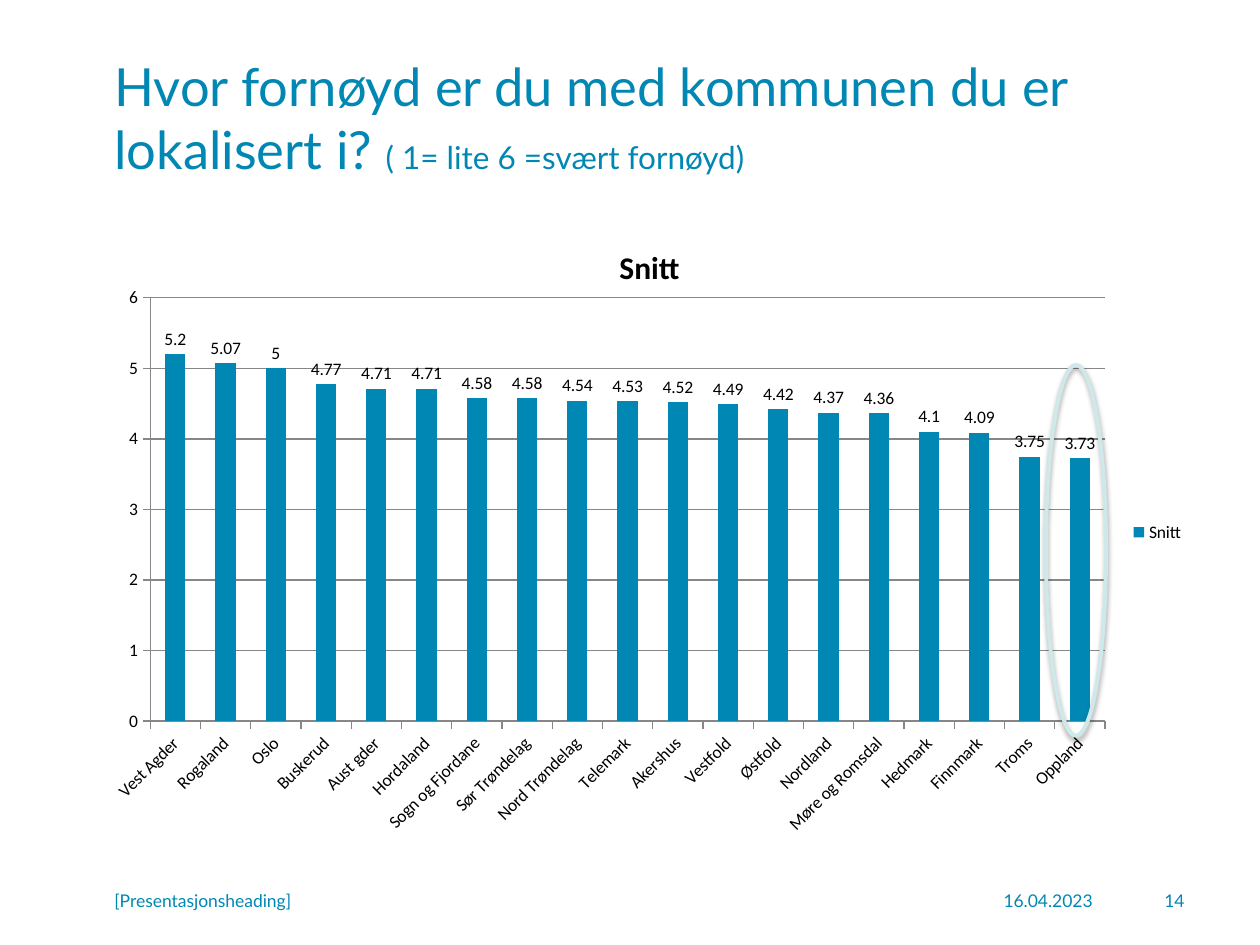
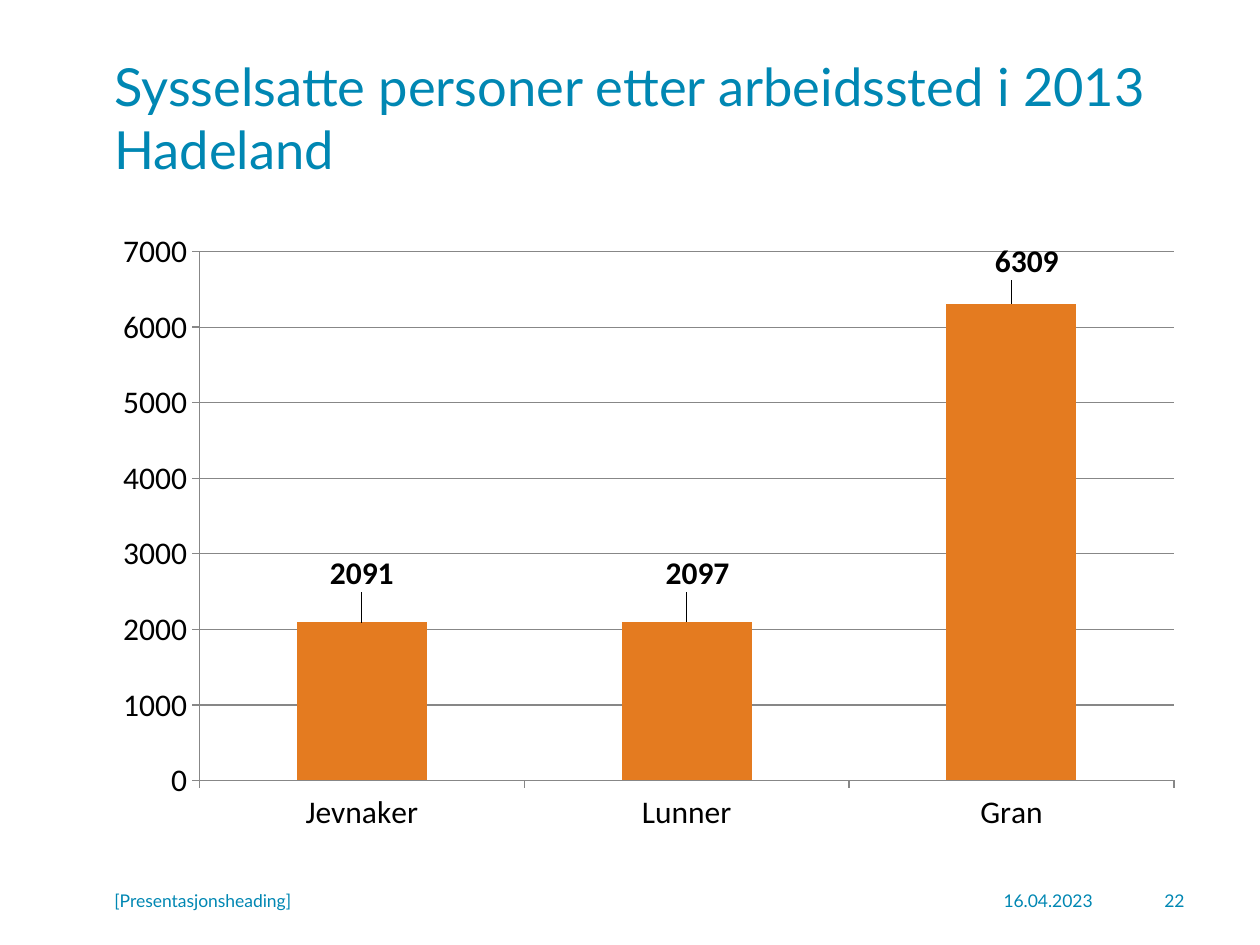
"""Build two survey slides, each with a title, a column chart and a footer."""
from dataclasses import dataclass

import lxml.etree
import pptx
import pptx.chart.data
import pptx.dml.color
import pptx.enum.chart
import pptx.enum.shapes
import pptx.enum.text
import pptx.oxml
import pptx.oxml.ns
import pptx.util

BLUE = pptx.dml.color.RGBColor(0x00, 0x87, 0xB3)
ORANGE = pptx.dml.color.RGBColor(0xE4, 0x7B, 0x20)
PALE = pptx.dml.color.RGBColor(0xCF, 0xE8, 0xEA)
GREY = pptx.dml.color.RGBColor(0x87, 0x87, 0x87)
BLACK = pptx.dml.color.RGBColor(0x00, 0x00, 0x00)

LEFT = pptx.enum.text.PP_ALIGN.LEFT
RIGHT = pptx.enum.text.PP_ALIGN.RIGHT
TEXT_FONT = "Lato"
CHART_FONT = "Calibri"
TITLE_AREA = (8.1, 4, 86.9, 16.67)
CHART_AREA = (8.1, 23.33, 86.9, 66)
FOOTER_AREA = (8.1, 92.67, 86.9, 5.33)

SATISFACTION = {
    "Vest Agder": 5.2, "Rogaland": 5.07, "Oslo": 5, "Buskerud": 4.77,
    "Aust gder": 4.71, "Hordaland": 4.71, "Sogn og Fjordane": 4.58,
    "Sør Trøndelag": 4.58, "Nord Trøndelag": 4.54, "Telemark": 4.53,
    "Akershus": 4.52, "Vestfold": 4.49, "Østfold": 4.42, "Nordland": 4.37,
    "Møre og Romsdal": 4.36, "Hedmark": 4.1, "Finnmark": 4.09,
    "Troms": 3.75, "Oppland": 3.73,
}
EMPLOYMENT = {"Jevnaker": 2091, "Lunner": 2097, "Gran": 6309}
LABEL_SHIFTS = [(0, -4), (1, -4), (1.4, -3)]


@dataclass
class Box:
    """A rectangle in EMU whose regions are given in percent of its size."""
    left: int
    top: int
    width: int
    height: int

    def region(self, left, top, width, height):
        """Return the box at these percentages of this one."""
        return Box(int(self.left + self.width * left / 100),
                   int(self.top + self.height * top / 100),
                   int(self.width * width / 100),
                   int(self.height * height / 100))

    def bounds(self):
        """Return the four lengths in the order that shapes take them."""
        return self.left, self.top, self.width, self.height


def apply_format(target, values):
    """Set each attribute of the target from a dict."""
    for name, value in values.items():
        setattr(target, name, value)


def style_font(font, size, color, name, bold=False):
    """Give a font its size, colour, name and weight."""
    apply_format(font, {"size": pptx.util.Pt(size), "name": name, "bold": bold})
    font.color.rgb = color


def add_text(page, box, spans, align=LEFT):
    """Add one paragraph of (text, size) spans, centred vertically."""
    frame = page.shapes.add_textbox(*box.bounds()).text_frame
    apply_format(frame, {"word_wrap": True,
                         "vertical_anchor": pptx.enum.text.MSO_ANCHOR.MIDDLE})
    para = frame.paragraphs[0]
    para.alignment = align
    for text, size in spans:
        if para.runs:
            para.add_run().text = text
            new_spans = para.runs[-1:]
        else:
            para.text = text
            new_spans = para.runs
        for span in new_spans:
            style_font(span.font, size, BLUE, TEXT_FONT)


def add_footer(page, box, number):
    """Place heading, date and page number along the footer box."""
    entries = [("[Presentasjonsheading]", 0, 53.2, LEFT),
               ("16.04.2023", 75.3, 16.3, RIGHT),
               (number, 92.3, 7.7, RIGHT)]
    for text, left, width, align in entries:
        add_text(page, box.region(left, 0, width, 100), [(text, 10)], align)


def manual_layout(values):
    """Build a chart layout element from a dict of settings."""
    layout = pptx.oxml.parse_xml(
        f'<c:layout {pptx.oxml.ns.nsdecls("c")}><c:manualLayout/></c:layout>')
    for name, value in values.items():
        lxml.etree.SubElement(layout[0], pptx.oxml.ns.qn(f"c:{name}"), val=str(value))
    return layout


def place_plot(chart, area):
    """Fix the inner plot area at percentages of the chart."""
    plot_area = chart.element.xpath("c:chart/c:plotArea")[0]
    for layout in plot_area.xpath("c:layout"):
        plot_area.remove(layout)
    values = {"layoutTarget": "inner", "xMode": "edge", "yMode": "edge"}
    values.update(zip("xywh", (f"{share / 100:.3f}" for share in area)))
    plot_area.insert(0, manual_layout(values))


def add_columns(page, box, name, figures, size, color, top, step, plot_share):
    """Add a column chart with value labels and return it."""
    data = pptx.chart.data.CategoryChartData()
    data.categories = list(figures)
    data.add_series(name, list(figures.values()))
    chart = page.shapes.add_chart(
        pptx.enum.chart.XL_CHART_TYPE.COLUMN_CLUSTERED, *box.bounds(), data).chart
    apply_format(chart, {"has_title": False, "has_legend": False})
    style_font(chart.font, size, BLACK, CHART_FONT)
    plot = chart.plots[0]
    apply_format(plot, {"gap_width": 150, "vary_by_categories": False,
                        "has_data_labels": True})
    apply_format(plot.data_labels, {
        "show_value": True,
        "position": pptx.enum.chart.XL_LABEL_POSITION.OUTSIDE_END})
    fill = plot.series[0].format.fill
    fill.solid()
    fill.fore_color.rgb = color
    scale = chart.value_axis
    apply_format(scale, {"minimum_scale": 0, "maximum_scale": top,
                         "major_unit": step, "has_major_gridlines": True})
    for axis in (scale, chart.category_axis):
        axis.major_tick_mark = pptx.enum.chart.XL_TICK_MARK.OUTSIDE
    for ruled in (scale, chart.category_axis, scale.major_gridlines):
        ruled.format.line.color.rgb = GREY
        ruled.format.line.width = pptx.util.Pt(0.75)
    place_plot(chart, plot_share)
    return chart


def add_highlight(page, box):
    """Ring one column with a pale, softly shadowed ellipse."""
    ring = page.shapes.add_shape(pptx.enum.shapes.MSO_SHAPE.OVAL, *box.bounds())
    ring.fill.background()
    ring.line.color.rgb = PALE
    ring.line.width = pptx.util.Pt(2.25)
    ring.shadow.inherit = False
    effects = ring.element.spPr.find(pptx.oxml.ns.qn("a:effectLst"))
    effects.append(pptx.oxml.parse_xml(
        f'<a:outerShdw {pptx.oxml.ns.nsdecls("a")} blurRad="39400" dist="22900" '
        'dir="5400000" rotWithShape="0"><a:srgbClr val="000000">'
        '<a:alpha val="35000"/></a:srgbClr></a:outerShdw>'))


def add_satisfaction(page, box):
    """Chart the county averages and ring the last county."""
    chart = add_columns(page, box, "Snitt", SATISFACTION, 10, BLUE, 6, 1,
                        (4.4, 12.4, 87.2, 67.9))
    chart.has_title = True
    para = chart.chart_title.text_frame.paragraphs[0]
    para.text = "Snitt"
    style_font(para.runs[0].font, 18, BLACK, CHART_FONT, bold=True)
    chart.has_legend = True
    apply_format(chart.legend, {
        "position": pptx.enum.chart.XL_LEGEND_POSITION.RIGHT,
        "include_in_layout": False})
    style_font(chart.category_axis.tick_labels.font, 10, BLACK, CHART_FONT)
    chart.element.xpath("//c:catAx/c:txPr/a:bodyPr")[0].set("rot", "-2700000")
    add_highlight(page, box.region(86.2, 23.2, 5.5, 59.4))


def add_employment(page, box):
    """Chart the employed by municipality with raised bold labels."""
    chart = add_columns(page, box, "Series 1", EMPLOYMENT, 18, ORANGE, 7000, 1000,
                        (8.9, 5, 89, 84.8))
    points = chart.plots[0].series[0].points
    for index in range(len(EMPLOYMENT)):
        label = points[index].data_label
        style_font(label.font, 18, BLACK, CHART_FONT, bold=True)
        label.position = pptx.enum.chart.XL_LABEL_POSITION.OUTSIDE_END
    for marker, shift in zip(chart.element.xpath("//c:dLbl/c:idx"), LABEL_SHIFTS):
        marker.addnext(manual_layout(
            dict(zip("xy", (f"{share / 100:.3f}" for share in shift)))))


def add_page(deck, title, add_content, number):
    """Add a page with title, chart region and footer."""
    page = deck.slides.add_slide(deck.slide_layouts[6])
    whole = Box(0, 0, deck.slide_width, deck.slide_height)
    add_text(page, whole.region(*TITLE_AREA), title)
    add_footer(page, whole.region(*FOOTER_AREA), number)
    add_content(page, whole.region(*CHART_AREA))


def main():
    """Build and save the deck."""
    deck = pptx.Presentation()
    deck.slide_width = pptx.util.Inches(10)
    deck.slide_height = pptx.util.Inches(7.5)
    add_page(deck, [("Hvor fornøyd er du med kommunen du er lokalisert i? ", 30),
                    ("( 1= lite 6 =svært fornøyd)", 18)], add_satisfaction, "14")
    add_page(deck, [("Sysselsatte personer etter arbeidssted i 2013\vHadeland", 30)],
             add_employment, "22")
    deck.save("out.pptx")


if __name__ == "__main__":
    main()
